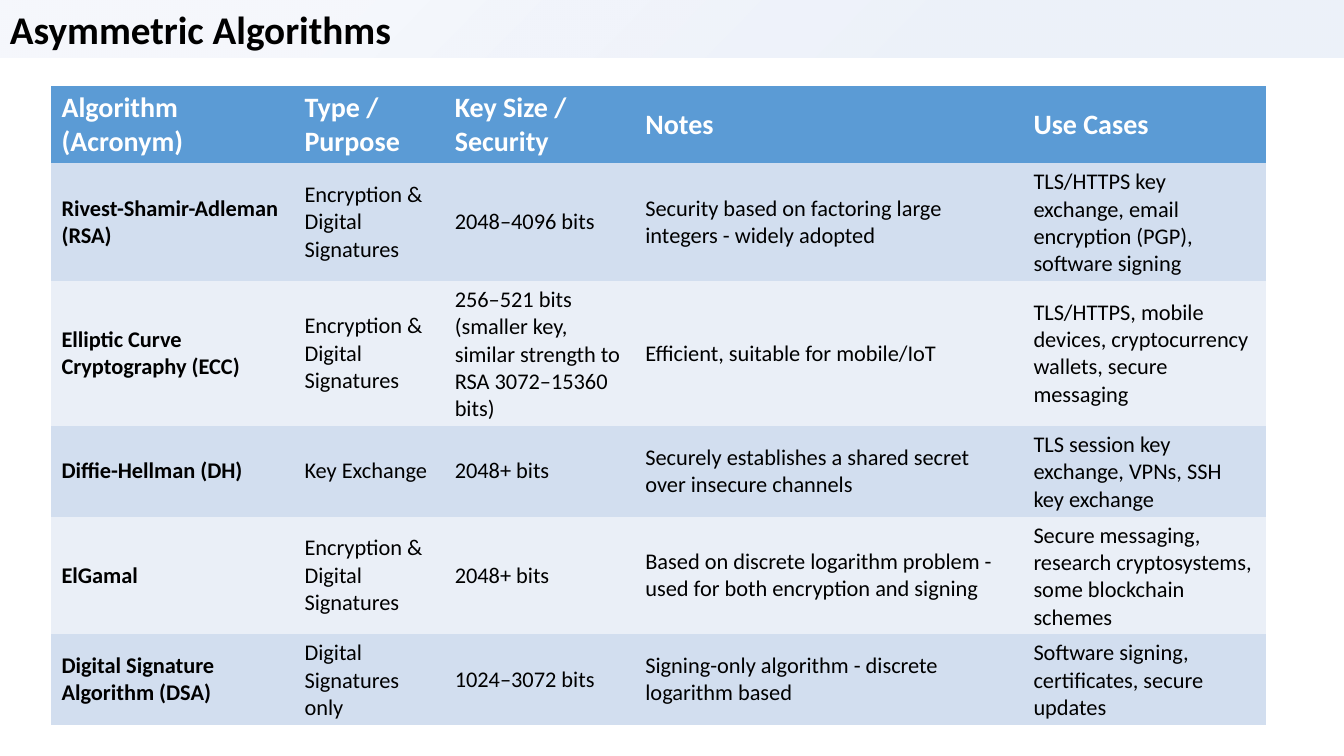
from lxml.etree import SubElement
from pptx import Presentation
from pptx.dml.color import RGBColor
from pptx.enum.shapes import MSO_SHAPE
from pptx.enum.text import MSO_ANCHOR, MSO_AUTO_SIZE, PP_ALIGN
from pptx.oxml.ns import qn
from pptx.util import Inches, Pt

HEADINGS = ("Algorithm (Acronym)", "Type / Purpose", "Key Size / Security", "Notes", "Use Cases")
BOTH_PURPOSES = "Encryption & Digital Signatures"
ALGORITHMS = (
    ("Rivest-Shamir-Adleman (RSA)", BOTH_PURPOSES, "2048–4096 bits",
     "Security based on factoring large integers - widely adopted",
     "TLS/HTTPS key exchange, email encryption (PGP), software signing"),
    ("Elliptic Curve Cryptography (ECC)", BOTH_PURPOSES,
     "256–521 bits (smaller key, similar strength to RSA 3072–15360 bits)",
     "Efficient, suitable for mobile/IoT",
     "TLS/HTTPS, mobile devices, cryptocurrency wallets, secure messaging"),
    ("Diffie-Hellman (DH)", "Key Exchange", "2048+ bits",
     "Securely establishes a shared secret over insecure channels",
     "TLS session key exchange, VPNs, SSH key exchange"),
    ("ElGamal", BOTH_PURPOSES, "2048+ bits",
     "Based on discrete logarithm problem - used for both encryption and signing",
     "Secure messaging, research cryptosystems, some blockchain schemes"),
    ("Digital Signature Algorithm (DSA)", "Digital Signatures only", "1024–3072 bits",
     "Signing-only algorithm - discrete logarithm based",
     "Software signing, certificates, secure updates"),
)
COLUMN_SHARES = (18.08, 11.18, 14.18, 28.88, 18.08)
ROW_SHARES = (10.27, 15.47, 19.2, 12, 15.47, 12)
PLAIN_TABLE_STYLE = "{2D5ABB26-0587-4C30-8999-92F81FD0307C}"


def color(value):
    return RGBColor.from_string(value)


class SlideBuilder:
    font_name = "Calibri"
    text_color = "000000"
    header_text = "FFFFFF"
    header_fill = "5B9BD5"
    band_fills = ("D2DEEF", "EAEFF7")
    title_tint = "4472C4"

    def __init__(self, presentation):
        self.width = presentation.slide_width
        self.height = presentation.slide_height
        self.slide = presentation.slides.add_slide(presentation.slide_layouts[6])

    def across(self, share):
        return round(self.width * share / 100)

    def down(self, share):
        return round(self.height * share / 100)

    def add_text(self, text_frame, text, size, bold, text_color):
        paragraph = text_frame.paragraphs[0]
        paragraph.alignment = PP_ALIGN.LEFT
        run = paragraph.add_run()
        run.text = text
        style = {"name": self.font_name, "size": Pt(size), "bold": bold}
        for name, value in style.items():
            setattr(run.font, name, value)
        run.font.color.rgb = color(text_color)

    def radial_fill(self, shape, stops):
        shape.fill.gradient()
        gradient = shape.element.spPr.find(qn("a:gradFill"))
        for child in list(gradient):
            gradient.remove(child)
        stop_list = SubElement(gradient, qn("a:gsLst"))
        for position, opacity in stops:
            stop = SubElement(stop_list, qn("a:gs"), pos=str(position * 1000))
            tint = SubElement(stop, qn("a:srgbClr"), val=self.title_tint)
            SubElement(tint, qn("a:alpha"), val=str(opacity * 1000))
        circle = SubElement(gradient, qn("a:path"), path="circle")
        SubElement(circle, qn("a:fillToRect"), l="100000", t="100000")

    def title_bar(self, text, height):
        shape = self.slide.shapes.add_shape(
            MSO_SHAPE.RECTANGLE, 0, 0, self.width, self.down(height))
        shape.shadow.inherit = False
        shape.line.fill.background()
        self.radial_fill(shape, ((26, 10), (76, 5)))
        frame_format = {"word_wrap": True, "auto_size": MSO_AUTO_SIZE.SHAPE_TO_FIT_TEXT,
                        "vertical_anchor": MSO_ANCHOR.MIDDLE}
        for name, value in frame_format.items():
            setattr(shape.text_frame, name, value)
        self.add_text(shape.text_frame, text, 28, True, self.text_color)

    def cell(self, cell, text, row, column):
        is_header = row == 0
        cell.vertical_anchor = MSO_ANCHOR.MIDDLE
        cell.fill.solid()
        cell.fill.fore_color.rgb = color(
            self.header_fill if is_header else self.band_fills[(row - 1) % 2])
        self.add_text(cell.text_frame, text, 20 if is_header else 16, is_header or column == 0,
                      self.header_text if is_header else self.text_color)

    def table(self, records, left, top, column_shares, row_shares):
        table = self.slide.shapes.add_table(
            len(records), len(column_shares), self.across(left), self.down(top),
            self.across(sum(column_shares)), self.down(sum(row_shares))).table
        table._tbl.tblPr.find(qn("a:tableStyleId")).text = PLAIN_TABLE_STYLE
        for column, share in zip(table.columns, column_shares):
            column.width = self.across(share)
        for row, share in zip(table.rows, row_shares):
            row.height = self.down(share)
        for row, record in enumerate(records):
            for column, text in enumerate(record):
                self.cell(table.cell(row, column), text, row, column)


def main():
    presentation = Presentation()
    presentation.slide_width = Inches(13.33)
    presentation.slide_height = Inches(7.5)
    builder = SlideBuilder(presentation)
    builder.title_bar("Asymmetric Algorithms", 7.6)
    builder.table((HEADINGS, *ALGORITHMS), 3.83, 11.33, COLUMN_SHARES, ROW_SHARES)
    presentation.save("out.pptx")


if __name__ == "__main__":
    main()
